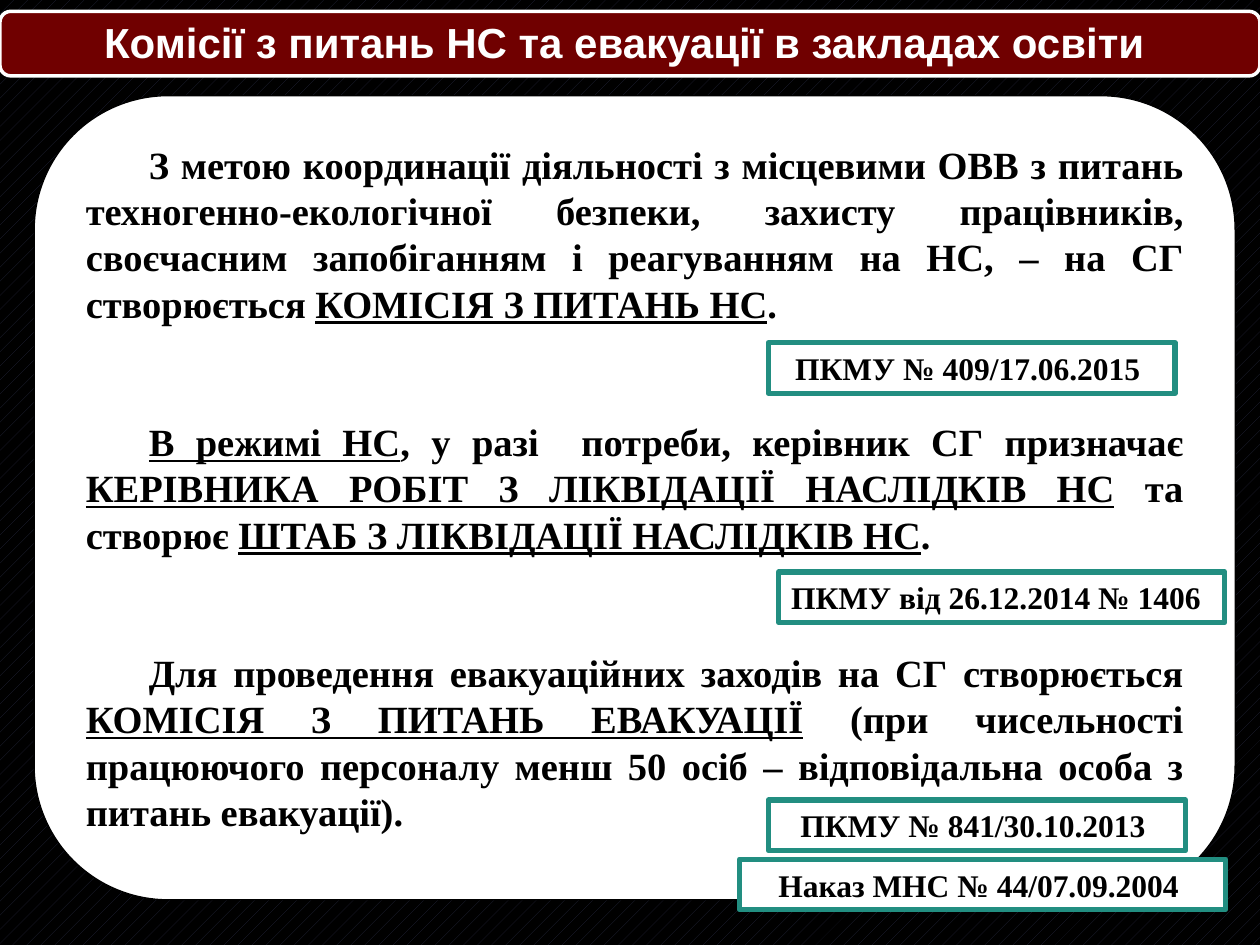
import pptx
import pptx.util
import pptx.dml.color
import pptx.enum.dml
import pptx.enum.shapes
import pptx.enum.text

Cm, Pt = pptx.util.Cm, pptx.util.Pt
RGB = pptx.dml.color.RGBColor
KIND = pptx.enum.shapes.MSO_SHAPE
ALIGN = pptx.enum.text.PP_ALIGN
ANCHOR = pptx.enum.text.MSO_ANCHOR

BLACK = RGB(0x00, 0x00, 0x00)
WHITE = RGB(0xFF, 0xFF, 0xFF)
NAVY = RGB(0x24, 0x26, 0x3C)
MAROON = RGB(0x70, 0x00, 0x00)
TEAL = RGB(0x22, 0x8E, 0x81)
SERIF = "Times New Roman"


def add_box(kind, left, top, width, height, fill, line, weight):
    box = slide.shapes.add_shape(kind, Cm(left), Cm(top), Cm(width), Cm(height))
    box.shadow.inherit = False
    box.fill.solid()
    box.fill.fore_color.rgb = fill
    box.line.color.rgb = line
    box.line.width = Pt(weight)
    return box


def add_run(para, text, size, color=BLACK, name=SERIF, under=False):
    run = para.add_run()
    run.text = text
    font = run.font
    font.name, font.size, font.bold = name, Pt(size), True
    font.color.rgb = color
    font.underline = under


prs = pptx.Presentation()
prs.slide_width, prs.slide_height = Cm(25.4), Cm(19.05)
slide = prs.slides.add_slide(prs.slide_layouts[5])

# Dark patterned background
back = slide.background.fill
back.patterned()
back.pattern = pptx.enum.dml.MSO_PATTERN.PERCENT_10
back.fore_color.rgb = NAVY
back.back_color.rgb = BLACK

# Title on its bar
bar = add_box(KIND.ROUNDED_RECTANGLE, 0, 0.23, 25.4, 1.3, MAROON, WHITE, 2)
title = slide.shapes.title
bar.element.addnext(title.element)
title.left, title.top, title.width, title.height = Cm(0.08), Cm(0.51), Cm(25.25), Cm(0.79)
frame = title.text_frame
frame.auto_size = pptx.enum.text.MSO_AUTO_SIZE.NONE
frame.vertical_anchor = ANCHOR.MIDDLE
frame.margin_left = frame.margin_right = Cm(0.2)
frame.margin_top = frame.margin_bottom = Cm(0.2)
para = frame.paragraphs[0]
para.alignment = ALIGN.CENTER
para.line_spacing = 0.9
add_run(para, "Комісії з питань НС та евакуації в закладах освіти ", 24, WHITE, "Arial")

# Card with three paragraphs: (text, underlined)
paras = [
    [("З метою координації діяльності з місцевими ОВВ з питань "
      "техногенно-екологічної безпеки, захисту працівників, своєчасним "
      "запобіганням і реагуванням на НС, – на СГ створюється ", False),
     ("КОМІСІЯ З ПИТАНЬ НС", True), (".", False)],
    [("В режимі НС", True),
     (", у разі  потреби, керівник СГ призначає ", False),
     ("КЕРІВНИКА РОБІТ З ЛІКВІДАЦІЇ НАСЛІДКІВ НС", True),
     (" та створює ", False),
     ("ШТАБ З ЛІКВІДАЦІЇ НАСЛІДКІВ НС", True), (".", False)],
    [("Для проведення евакуаційних заходів на СГ створюється ", False),
     ("КОМІСІЯ З ПИТАНЬ ЕВАКУАЦІЇ", True),
     (" (при чисельності працюючого персоналу менш 50 осіб – "
      "відповідальна особа з питань евакуації).", False)],
]
pitch = 26.4
card = add_box(KIND.ROUNDED_RECTANGLE, 0.69, 1.93, 24.21, 16.21, WHITE, BLACK, 0.75)
frame = card.text_frame
frame.word_wrap = True
frame.vertical_anchor = ANCHOR.TOP
for i, parts in enumerate(paras):
    para = frame.add_paragraph() if i else frame.paragraphs[0]
    para.alignment = ALIGN.JUSTIFY
    para.line_spacing = Pt(pitch)
    para.space_before = Pt(2 * pitch if i else 0)
    props = para._p.get_or_add_pPr()
    props.set("marL", "0")
    props.set("indent", str(Cm(1.27)))
    for text, under in parts:
        add_run(para, text, 22, under=under)

# Labels naming the legal acts
labels = [
    (15.49, 6.91, 8.2, "ПКМУ № 409/17.06.2015 ", ALIGN.CENTER),
    (15.7, 11.53, 8.99, "ПКМУ від 26.12.2014 № 1406", ALIGN.LEFT),
    (15.49, 16.13, 8.41, "ПКМУ № 841/30.10.2013 ", ALIGN.CENTER),
    (14.91, 17.32, 9.8, "Наказ МНС № 44/07.09.2004 ", ALIGN.CENTER),
]
for left, top, width, text, align in labels:
    label = add_box(KIND.RECTANGLE, left, top, width, 1.02, WHITE, TEAL, 3)
    frame = label.text_frame
    frame.word_wrap = True
    frame.vertical_anchor = ANCHOR.MIDDLE
    para = frame.paragraphs[0]
    para.alignment = align
    add_run(para, text, 18)

prs.save("out.pptx")
